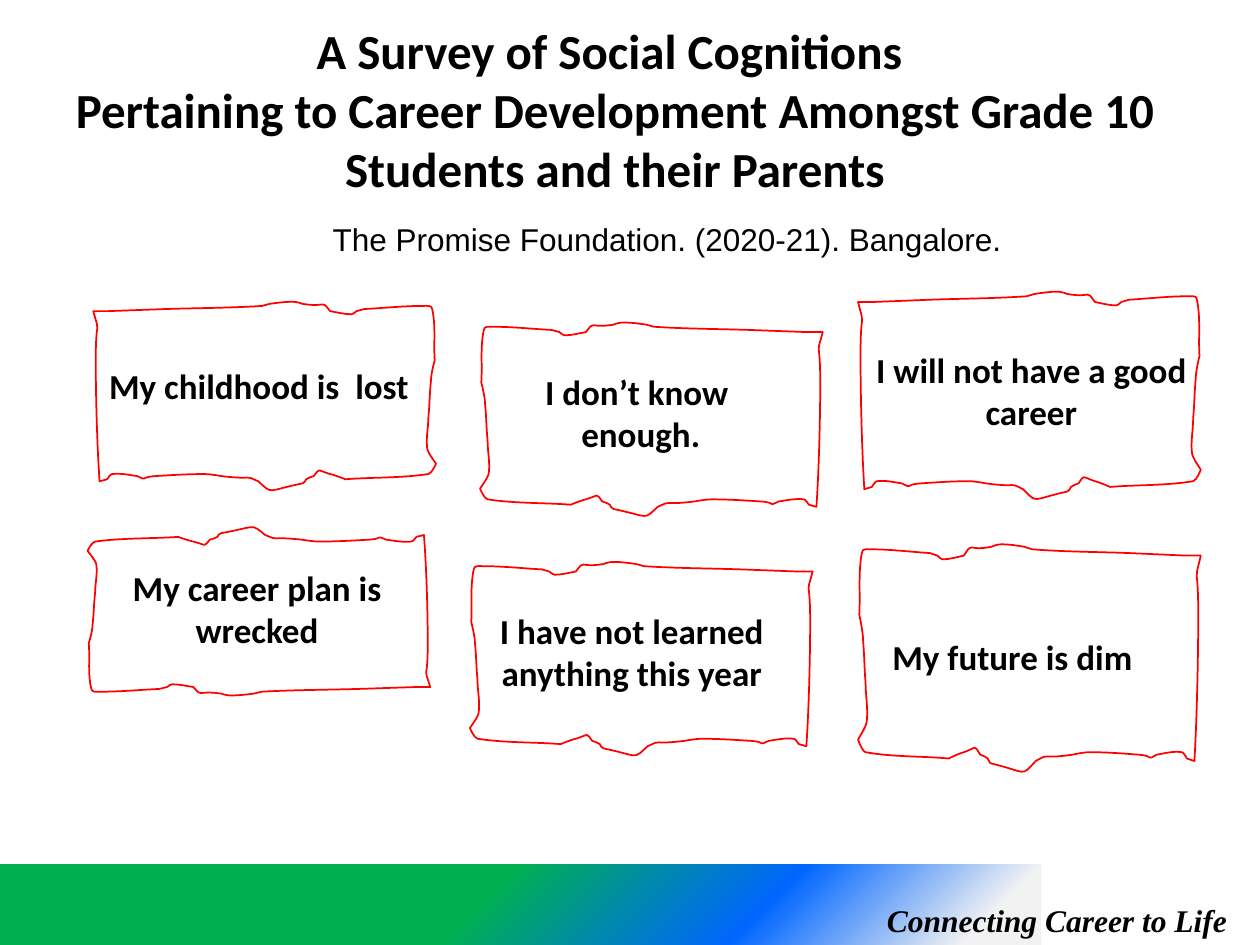
"""Build the survey slide with six torn-paper quotes."""
from dataclasses import dataclass

from pptx import Presentation
from pptx.dml.color import RGBColor
from pptx.enum.shapes import MSO_SHAPE
from pptx.enum.text import MSO_ANCHOR, MSO_AUTO_SIZE, PP_ALIGN
from pptx.oxml import parse_xml
from pptx.oxml.ns import nsdecls
from pptx.util import Pt

RECTANGLE = MSO_SHAPE.RECTANGLE
TOP, MIDDLE = MSO_ANCHOR.TOP, MSO_ANCHOR.MIDDLE
LEFT, CENTER = PP_ALIGN.LEFT, PP_ALIGN.CENTER
FIT_SHAPE, NO_FIT = MSO_AUTO_SIZE.SHAPE_TO_FIT_TEXT, MSO_AUTO_SIZE.NONE

BLACK = RGBColor(0x00, 0x00, 0x00)
WHITE = RGBColor(0xFF, 0xFF, 0xFF)
RED = RGBColor(0xFF, 0x00, 0x00)
PALE_GREY = RGBColor(0xF2, 0xF2, 0xF2)
BLUE = RGBColor(0x00, 0x66, 0xFF)
TEAL_BLUE = RGBColor(0x00, 0x69, 0xF7)
GREEN = RGBColor(0x00, 0xB0, 0x50)

BAND_STOPS = [(7, PALE_GREY), (28, BLUE), (29, TEAL_BLUE), (54, GREEN)]

QUOTE_WIDTH = 193.68
PAPER_WIDTH = 195.84
OUTLINE_WIDTH, OUTLINE_HEIGHT = 272, 181
OUTLINE_START = (272, 9)
OUTLINE_CURVES = [
    (266, 35, 270, 10, 270, 56), (270, 89, 269, 137, 267, 172),
    (265, 171, 263, 171, 261, 170), (260, 168, 258, 165, 257, 165),
    (250, 164, 243, 166, 237, 167), (228, 172, 236, 168, 223, 167),
    (210, 166, 197, 165, 184, 165), (180, 165, 175, 166, 170, 167),
    (142, 171, 154, 165, 141, 172), (129, 185, 135, 181, 106, 174),
    (104, 174, 104, 171, 103, 170), (101, 168, 99, 168, 97, 167),
    (92, 159, 95, 161, 84, 165), (80, 166, 72, 170, 72, 170),
    (50, 168, 28, 169, 6, 165), (3, 164, 0, 155, 0, 155),
    (1, 153, 7, 144, 7, 140), (8, 130, 6, 120, 6, 110),
    (5, 99, 5, 87, 4, 76), (4, 69, 1, 56, 1, 56),
    (2, 40, 0, 23, 3, 7), (3, 3, 8, 4, 10, 4),
    (26, 4, 41, 6, 57, 7), (59, 8, 61, 8, 63, 9),
    (64, 10, 66, 12, 67, 12), (73, 12, 79, 10, 84, 9),
    (92, -3, 85, 6, 106, 2), (108, 1, 111, 0, 114, 0),
    (120, 0, 126, 1, 132, 2), (134, 2, 136, 4, 138, 4),
    (164, 6, 189, 6, 215, 7),
]
OUTLINE_END = (260, 9)


@dataclass
class Quote:
    """A quote with its text position and its paper position."""
    text: str
    text_left: float
    text_top: float
    paper_left: float
    paper_top: float
    paper_height: float
    text_height: float = 73.44
    mirrored: bool = False
    upturned: bool = False

    def place(self, x, y):
        """Return the slide position of an outline point."""
        across, down = x / OUTLINE_WIDTH, y / OUTLINE_HEIGHT
        across = 1 - across if self.mirrored else across
        down = 1 - down if self.upturned else down
        return (Pt(self.paper_left + across * PAPER_WIDTH),
                Pt(self.paper_top + down * self.paper_height))


QUOTES = [
    Quote("My childhood is  lost", 51.12, 183.6, 53.28, 172.44, 108, mirrored=True),
    Quote("I have not learned anything this year", 264.24, 335.52, 268.56, 321.12, 110.88),
    Quote("I will not have a good career", 492.48, 186.48, 490.32, 166.68, 118.8,
          mirrored=True),
    Quote("My career plan is wrecked", 50.04, 311.04, 50.04, 300.96, 96.48, upturned=True),
    Quote("My future is dim", 481.68, 324, 490.32, 311.04, 130.32, text_height=102.24),
    Quote("I don’t know \nenough.", 269.28, 198.72, 274.32, 184.32, 110.88),
]


def write_text(shape, text, font="Calibri", size=20, bold=True, italic=False,
               align=CENTER, anchor=TOP, fit=NO_FIT):
    """Write the lines of text as paragraphs in one format."""
    frame = shape.text_frame
    frame.word_wrap = True
    frame.auto_size = fit
    frame.vertical_anchor = anchor
    frame.text = text
    for paragraph in frame.paragraphs:
        paragraph.alignment = align
        for run in paragraph.runs:
            run.font.name = font
            run.font.size = Pt(size)
            run.font.bold = bold
            run.font.italic = italic
            run.font.color.rgb = BLACK


def add_text(shapes, text, left, top, width, height, **text_format):
    """Add a text box."""
    box = shapes.add_textbox(Pt(left), Pt(top), Pt(width), Pt(height))
    write_text(box, text, **text_format)


def add_rectangle(shapes, left, top, width, height):
    """Add a rectangle without a line or shadow."""
    shape = shapes.add_shape(RECTANGLE, Pt(left), Pt(top), Pt(width), Pt(height))
    shape.shadow.inherit = False
    shape.line.fill.background()
    return shape


def fill_from_corner(shape, stops):
    """Fill a shape with a circular gradient from its bottom right corner."""
    stop_xml = "".join(
        f'<a:gs pos="{position * 1000}"><a:srgbClr val="{color}"/></a:gs>'
        for position, color in stops)
    gradient = parse_xml(
        f'<a:gradFill {nsdecls("a")} rotWithShape="1"><a:gsLst>{stop_xml}</a:gsLst>'
        '<a:path path="circle"><a:fillToRect l="100000" t="100000"/></a:path>'
        '</a:gradFill>')
    shape.element.spPr.find("{*}prstGeom").addnext(gradient)


def curve_edges(paper, quote):
    """Turn the straight edges of a paper into the curves of the outline."""
    edges = list(paper.element.iter("{*}lnTo"))
    for edge, (x1, y1, x2, y2, x3, y3) in zip(edges, OUTLINE_CURVES):
        placed = [quote.place(x, y) for x, y in ((x1, y1), (x2, y2), (x3, y3))]
        points = "".join(f'<a:pt x="{x - paper.left}" y="{y - paper.top}"/>'
                         for x, y in placed)
        curve = parse_xml(f'<a:cubicBezTo {nsdecls("a")}>{points}</a:cubicBezTo>')
        edge.getparent().replace(edge, curve)


def add_paper(shapes, quote):
    """Add the torn paper outline of a quote."""
    corners = [curve[4:] for curve in OUTLINE_CURVES] + [OUTLINE_END, OUTLINE_START]
    builder = shapes.build_freeform(*quote.place(*OUTLINE_START))
    builder.add_line_segments([quote.place(*corner) for corner in corners], close=True)
    paper = builder.convert_to_shape()
    curve_edges(paper, quote)
    paper.shadow.inherit = False
    paper.fill.background()
    paper.line.color.rgb = RED
    paper.line.width = Pt(1)


def add_quote(slide, quote):
    """Add a quote grouped with its paper."""
    group = slide.shapes.add_group_shape()
    add_text(group.shapes, quote.text, quote.text_left, quote.text_top,
             QUOTE_WIDTH, quote.text_height, anchor=MIDDLE)
    add_paper(group.shapes, quote)


def main():
    """Build and save the slide."""
    presentation = Presentation()
    presentation.slide_width, presentation.slide_height = Pt(720), Pt(540)
    slide = presentation.slides.add_slide(presentation.slide_layouts[6])
    shapes = slide.shapes

    band = add_rectangle(shapes, 0, 493.92, 594.72, 46.08)
    fill_from_corner(band, BAND_STOPS)
    add_text(shapes, "Connecting Career to Life", 499.68, 511.2, 255.6, 28.8,
             font="Times New Roman", size=18, italic=True, align=LEFT, fit=FIT_SHAPE)
    add_text(shapes, "The Promise Foundation. (2020-21). Bangalore. ",
             59.76, 122, 648, 28.8, font="Arial", size=18, bold=False, fit=FIT_SHAPE)
    for quote in QUOTES:
        add_quote(slide, quote)

    title = add_rectangle(shapes, 16.56, 8.4, 669.6, 115.92)
    title.fill.solid()
    title.fill.fore_color.rgb = WHITE
    write_text(title, "A Survey of Social Cognitions \nPertaining to Career Development "
               "Amongst Grade 10 Students and their Parents", size=28)
    presentation.save("out.pptx")


if __name__ == "__main__":
    main()
